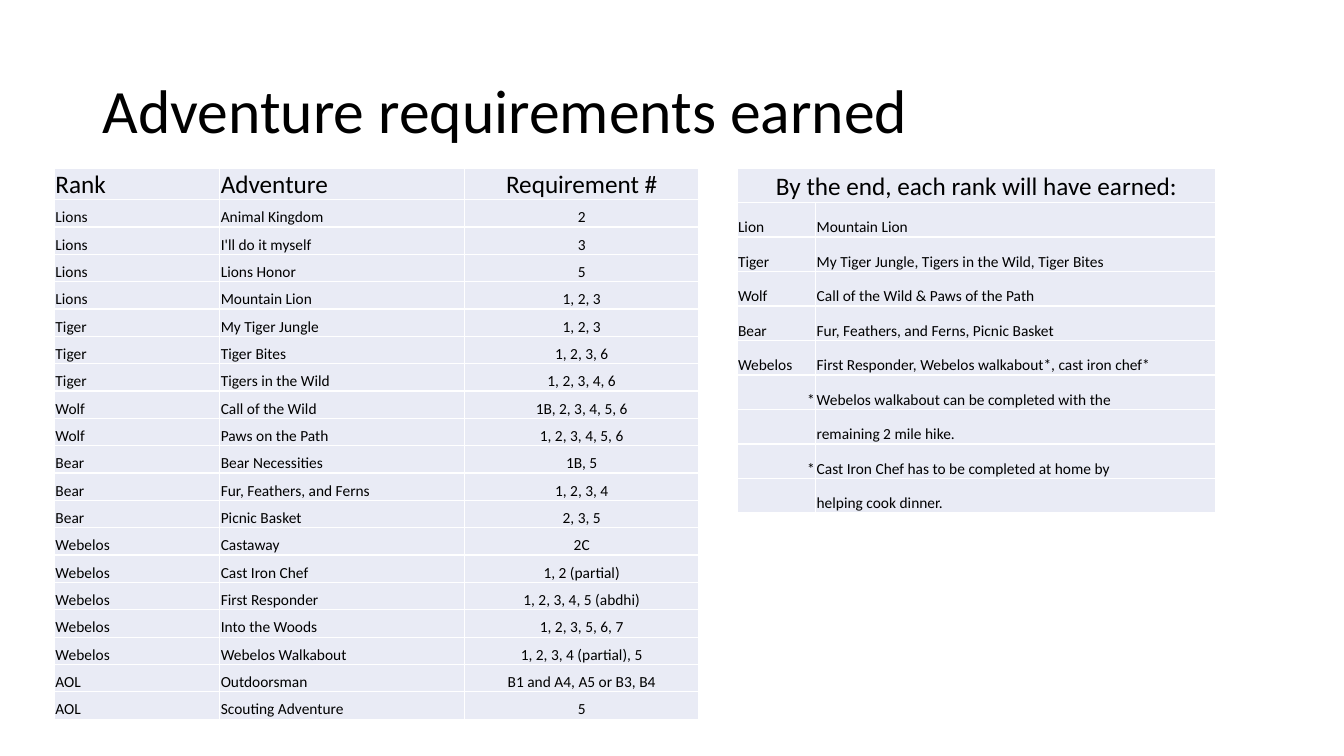
from lxml.etree import SubElement
from pptx import Presentation
from pptx.dml.color import RGBColor
from pptx.enum.text import MSO_ANCHOR, PP_ALIGN
from pptx.oxml.ns import qn
from pptx.util import Inches, Pt

FONT = "Calibri"
COLORS = {"text": "000000", "cell": "E9EBF5", "border": "FFFFFF"}
LEFT, CENTER, RIGHT = PP_ALIGN.LEFT, PP_ALIGN.CENTER, PP_ALIGN.RIGHT

REQUIREMENTS = [
    ("Rank", "Adventure", "Requirement #"),
    ("Lions", "Animal Kingdom", "2"),
    ("Lions", "I'll do it myself", "3"),
    ("Lions", "Lions Honor", "5"),
    ("Lions", "Mountain Lion", "1, 2, 3"),
    ("Tiger", "My Tiger Jungle", "1, 2, 3"),
    ("Tiger", "Tiger Bites", "1, 2, 3, 6"),
    ("Tiger", "Tigers in the Wild", "1, 2, 3, 4, 6"),
    ("Wolf", "Call of the Wild", "1B, 2, 3, 4, 5, 6"),
    ("Wolf", "Paws on the Path", "1, 2, 3, 4, 5, 6"),
    ("Bear", "Bear Necessities", "1B, 5"),
    ("Bear", "Fur, Feathers, and Ferns", "1, 2, 3, 4"),
    ("Bear", "Picnic Basket", "2, 3, 5"),
    ("Webelos", "Castaway", "2C"),
    ("Webelos", "Cast Iron Chef", "1, 2 (partial)"),
    ("Webelos", "First Responder", "1, 2, 3, 4, 5 (abdhi)"),
    ("Webelos", "Into the Woods", "1, 2, 3, 5, 6, 7"),
    ("Webelos", "Webelos Walkabout", "1, 2, 3, 4 (partial), 5"),
    ("AOL", "Outdoorsman", "B1 and A4, A5 or B3, B4"),
    ("AOL", "Scouting Adventure", "5"),
]

EARNED = [
    ("By the end, each rank will have earned:", ""),
    ("Lion", "Mountain Lion"),
    ("Tiger", "My Tiger Jungle, Tigers in the Wild, Tiger Bites"),
    ("Wolf", "Call of the Wild & Paws of the Path"),
    ("Bear", "Fur, Feathers, and Ferns, Picnic Basket"),
    ("Webelos", "First Responder, Webelos walkabout*, cast iron chef*"),
    ("*", "Webelos walkabout can be completed with the"),
    ("", "remaining 2 mile hike."),
    ("*", "Cast Iron Chef has to be completed at home by"),
    ("", "helping cook dinner."),
]


def write_text(para, text, size, align=LEFT):
    para.text = text
    para.alignment = align
    for span in para.runs:
        span.font.name = FONT
        span.font.size = Pt(size)
        span.font.color.rgb = RGBColor.from_string(COLORS["text"])


def style_cell(cell):
    cell.vertical_anchor = MSO_ANCHOR.BOTTOM
    cell.margin_left = cell.margin_right = cell.margin_top = Inches(0.01)
    cell.margin_bottom = 0
    # Borders come before the fill in the cell properties
    properties = cell._tc.get_or_add_tcPr()
    for side in ("a:lnL", "a:lnR", "a:lnT", "a:lnB"):
        line = SubElement(properties, qn(side), w=str(Pt(1)))
        paint = SubElement(line, qn("a:solidFill"))
        SubElement(paint, qn("a:srgbClr"), val=COLORS["border"])
    cell.fill.solid()
    cell.fill.fore_color.rgb = RGBColor.from_string(COLORS["cell"])


def add_title(page, box, text):
    frame = page.shapes.add_textbox(*map(Inches, box)).text_frame
    frame.word_wrap = True
    frame.vertical_anchor = MSO_ANCHOR.MIDDLE
    write_text(frame.paragraphs[0], text, 44)
    frame.paragraphs[0].line_spacing = 0.9


def add_grid(page, box, rows, widths, header_height, align_for):
    """Fill the box with a table; body rows share the height below the header."""
    table = page.shapes.add_table(len(rows), len(widths), *map(Inches, box)).table
    table.first_row = table.horz_banding = False
    for column, width in zip(table.columns, widths):
        column.width = Inches(width)
    body_height = (box[3] - header_height) / (len(rows) - 1)
    for i, values in enumerate(rows):
        table.rows[i].height = Inches(body_height if i else header_height)
        for j, value in enumerate(values):
            cell = table.cell(i, j)
            style_cell(cell)
            para = cell.text_frame.paragraphs[0]
            size = 11 if i else 18
            write_text(para, value, size, align_for(i, j, value))
            para.font.size = Pt(size)
    return table


def add_requirements(page, box):
    add_grid(page, box, REQUIREMENTS, (1.64, 2.43, 2.32), 0.31,
             lambda i, j, value: CENTER if j == 2 else LEFT)


def add_earned(page, box):
    def align_for(i, j, value):
        if i == 0:
            return CENTER
        return RIGHT if value == "*" else LEFT

    table = add_grid(page, box, EARNED, (0.78, 3.97), 0.34, align_for)
    table.cell(0, 0).merge(table.cell(0, 1))


def main():
    deck = Presentation()
    deck.slide_width, deck.slide_height = Inches(13.33), Inches(7.5)
    page = deck.slides.add_slide(deck.slide_layouts[6])
    add_title(page, (0.92, 0.4, 11.5, 1.45), "Adventure requirements earned")
    add_requirements(page, (0.54, 1.67, 6.39, 5.47))
    add_earned(page, (7.31, 1.67, 4.76, 3.42))
    deck.save("out.pptx")


if __name__ == "__main__":
    main()
